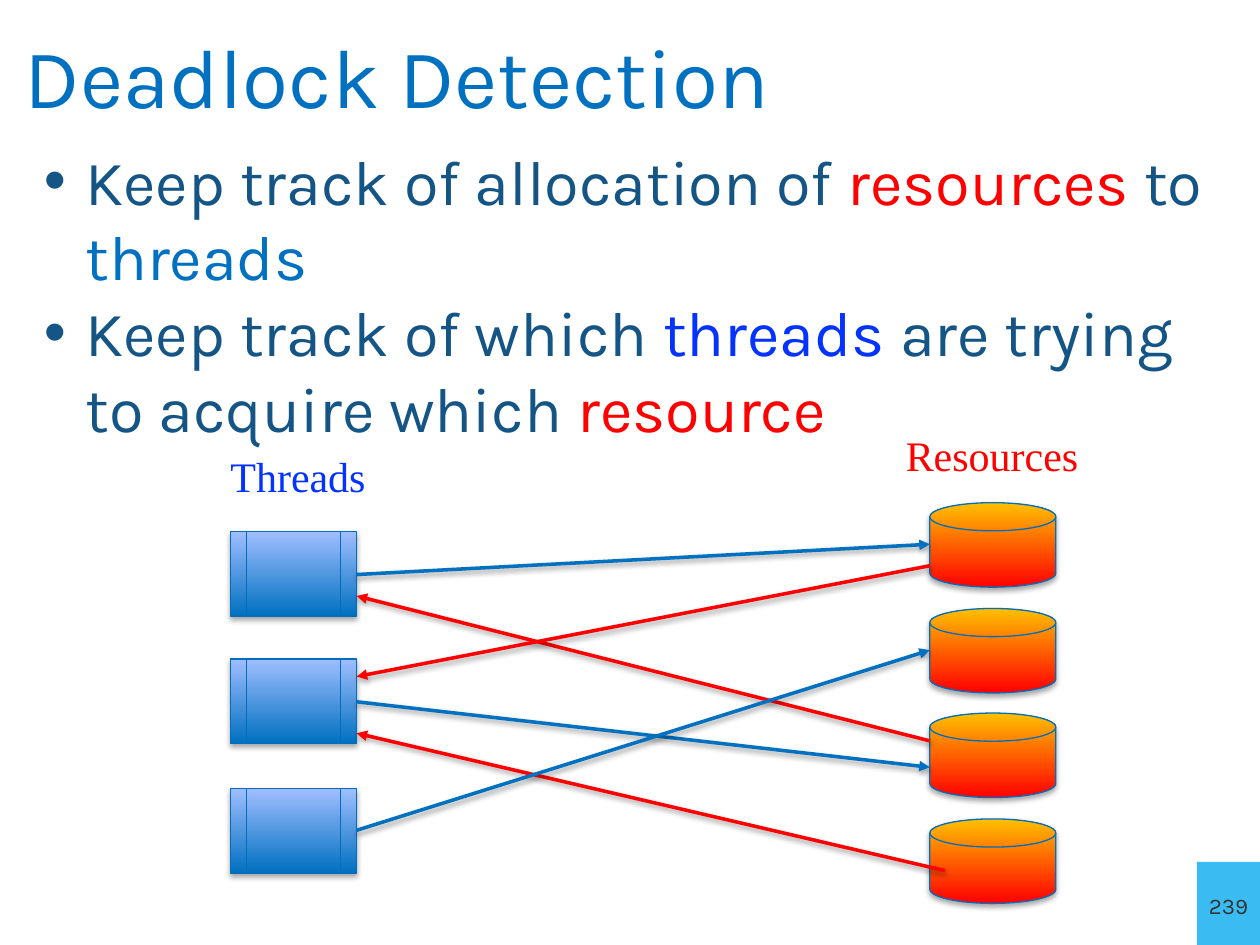
from dataclasses import dataclass

from lxml.etree import SubElement
from pptx import Presentation
from pptx.dml.color import RGBColor
from pptx.enum.shapes import MSO_CONNECTOR, MSO_SHAPE as Preset
from pptx.enum.text import MSO_ANCHOR as Anchor, PP_ALIGN as Align
from pptx.oxml.ns import qn
from pptx.util import Pt

PX = 9144
NAVY, BLUE, BRIGHT, RED = "145586", "0070C0", "0432FF", "FF0000"
KARLA, TIMES = "Karla", "Times New Roman"


@dataclass(frozen=True)
class Node:
    preset: Preset
    left: int
    tops: tuple[int, ...]
    bottom_color: str
    top_color: str


@dataclass(frozen=True)
class Arrow:
    start: tuple[int, int]
    end: tuple[int, int]
    color: str


@dataclass(frozen=True)
class Label:
    box: tuple[int, int, int, int]
    words: str
    size: int
    font: str
    color: str
    anchor: Anchor = Anchor.TOP
    align: Align = Align.LEFT
    wrap: bool = False
    side_inset: int = 10


NODES = (
    Node(Preset.FLOWCHART_PREDEFINED_PROCESS, 183, (422, 523, 626), BLUE, "A0BEFF"),
    Node(Preset.FLOWCHART_MAGNETIC_DISK, 738, (399, 483, 566, 650), RED, "FFC000"),
)
ARROWS = (
    Arrow((283, 456), (738, 432), BLUE),
    Arrow((283, 557), (738, 609), BLUE),
    Arrow((738, 588), (283, 473), RED),
    Arrow((738, 449), (283, 537), RED),
    Arrow((750, 691), (283, 582), RED),
    Arrow((283, 659), (738, 516), BLUE),
)
TITLE = Label((10, 11, 980, 97), "Deadlock Detection", 48, KARLA, BLUE, Anchor.MIDDLE, wrap=True)
HEADINGS = (
    Label((709, 336, 159, 50), "Resources", 24, TIMES, RED),
    Label((173, 353, 129, 50), "Threads", 24, TIMES, BRIGHT),
)
PAGE_NUMBER = Label(
    (950, 684, 50, 66), "239", 16, KARLA, "323232", Anchor.MIDDLE, Align.CENTER, side_inset=0
)
BULLETS = (
    (
        ("Keep track of allocation of ", NAVY),
        ("resources", RED),
        (" to ", NAVY),
        ("threads", BLUE),
    ),
    (
        ("Keep track of which ", NAVY),
        ("threads", BRIGHT),
        (" are trying to acquire which ", NAVY),
        ("resource", RED),
    ),
)


def rgb(value: str) -> RGBColor:
    return RGBColor.from_string(value)


def emu(*lengths: int) -> list[int]:
    return [length * PX for length in lengths]


def add_run(paragraph, words: str, size: int, font: str, color: str):
    run = paragraph.add_run()
    run.text = words
    run.font.size = Pt(size)
    run.font.name = font
    run.font.color.rgb = rgb(color)
    return run


def add_shadow(shape, distance: int, opacity: int) -> None:
    effects = SubElement(shape._element.spPr, qn("a:effectLst"))
    shadow = SubElement(
        effects, qn("a:outerShdw"), blurRad="40000", dist=str(distance), dir="5400000", rotWithShape="0"
    )
    black = SubElement(shadow, qn("a:srgbClr"), val="000000")
    SubElement(black, qn("a:alpha"), val=str(opacity * 1000))


def draw_label(slide, label: Label):
    frame = slide.shapes.add_textbox(*emu(*label.box)).text_frame
    frame.word_wrap = label.wrap
    frame.vertical_anchor = label.anchor
    frame.margin_left, frame.margin_right = emu(label.side_inset, label.side_inset)
    paragraph = frame.paragraphs[0]
    paragraph.alignment = label.align
    return add_run(paragraph, label.words, label.size, label.font, label.color)


def draw_bullets(slide) -> None:
    frame = slide.shapes.add_textbox(*emu(25, 108, 950, 628)).text_frame
    frame.word_wrap = True
    for index, parts in enumerate(BULLETS):
        paragraph = frame.add_paragraph() if index else frame.paragraphs[0]
        properties = paragraph._p.get_or_add_pPr()
        properties.set("marL", str(33 * PX))
        properties.set("indent", str(-33 * PX))
        SubElement(properties, qn("a:buFont"), typeface="Arial")
        SubElement(properties, qn("a:buChar"), char="•")
        for words, color in parts:
            add_run(paragraph, words, 36, KARLA, color)


def draw_page_number(slide) -> None:
    tile = slide.shapes.add_shape(Preset.RECTANGLE, *emu(*PAGE_NUMBER.box))
    tile.shadow.inherit = False
    tile.fill.solid()
    tile.fill.fore_color.rgb = rgb("3ABCF2")
    tile.line.fill.background()
    number = draw_label(slide, PAGE_NUMBER)
    number.font._element.set("cap", "small")


def draw_nodes(slide, node: Node) -> None:
    for top in node.tops:
        shape = slide.shapes.add_shape(node.preset, *emu(node.left, top, 100, 67))
        shape.fill.gradient()
        shape.fill.gradient_angle = 90
        for stop, color, position in zip(
            shape.fill.gradient_stops, (node.bottom_color, node.top_color), (0, 1)
        ):
            stop.color.rgb = rgb(color)
            stop.position = position
        shape.line.color.rgb = rgb("006EBC")
        shape.line.width = Pt(0.75)
        add_shadow(shape, 23000, 35)


def draw_arrow(slide, arrow: Arrow) -> None:
    connector = slide.shapes.add_connector(MSO_CONNECTOR.STRAIGHT, *emu(*arrow.start, *arrow.end))
    connector.line.color.rgb = rgb(arrow.color)
    connector.line.width = Pt(2)
    SubElement(connector._element.spPr.find(qn("a:ln")), qn("a:tailEnd"), type="triangle")
    add_shadow(connector, 20000, 38)


def main() -> None:
    deck = Presentation()
    deck.slide_width, deck.slide_height = emu(1000, 750)
    slide = deck.slides.add_slide(deck.slide_layouts[6])
    draw_bullets(slide)
    draw_label(slide, TITLE)
    draw_page_number(slide)
    for node in NODES:
        draw_nodes(slide, node)
    for heading in HEADINGS:
        draw_label(slide, heading)
    for arrow in ARROWS:
        draw_arrow(slide, arrow)
    deck.save("out.pptx")


if __name__ == "__main__":
    main()
